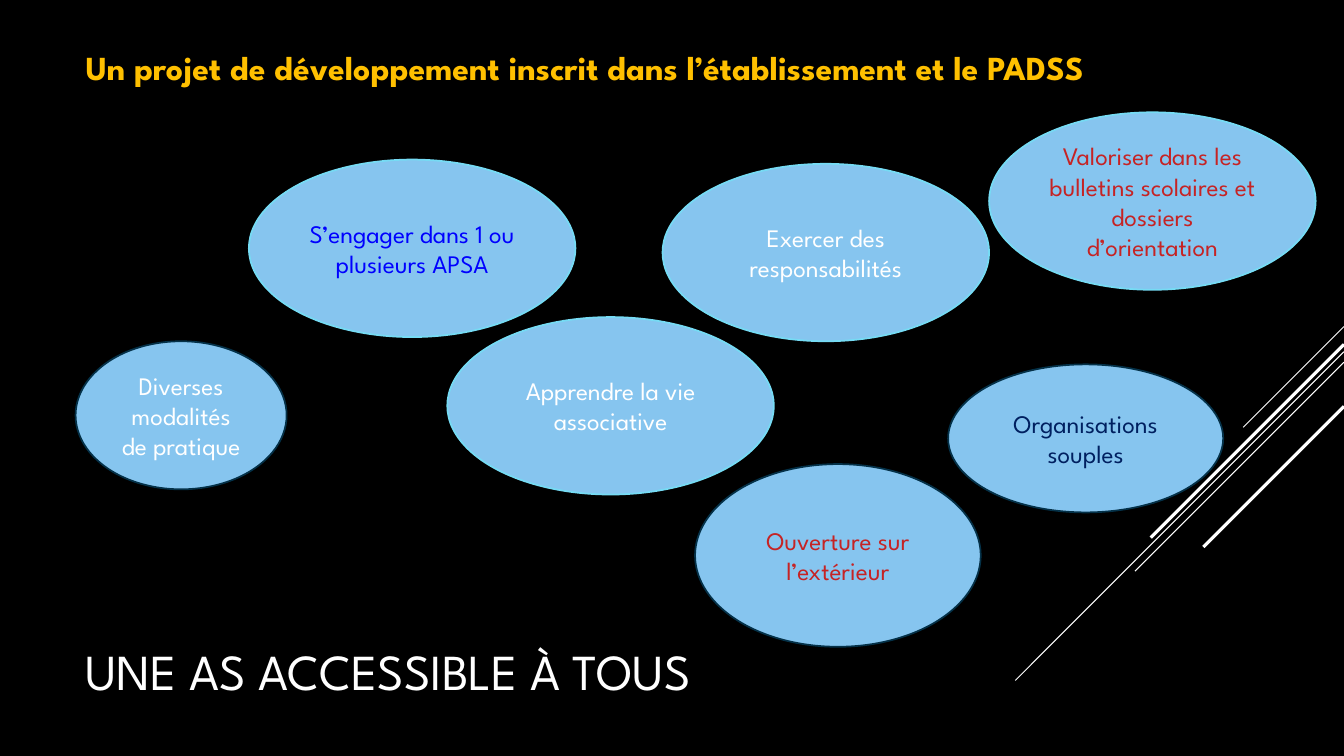
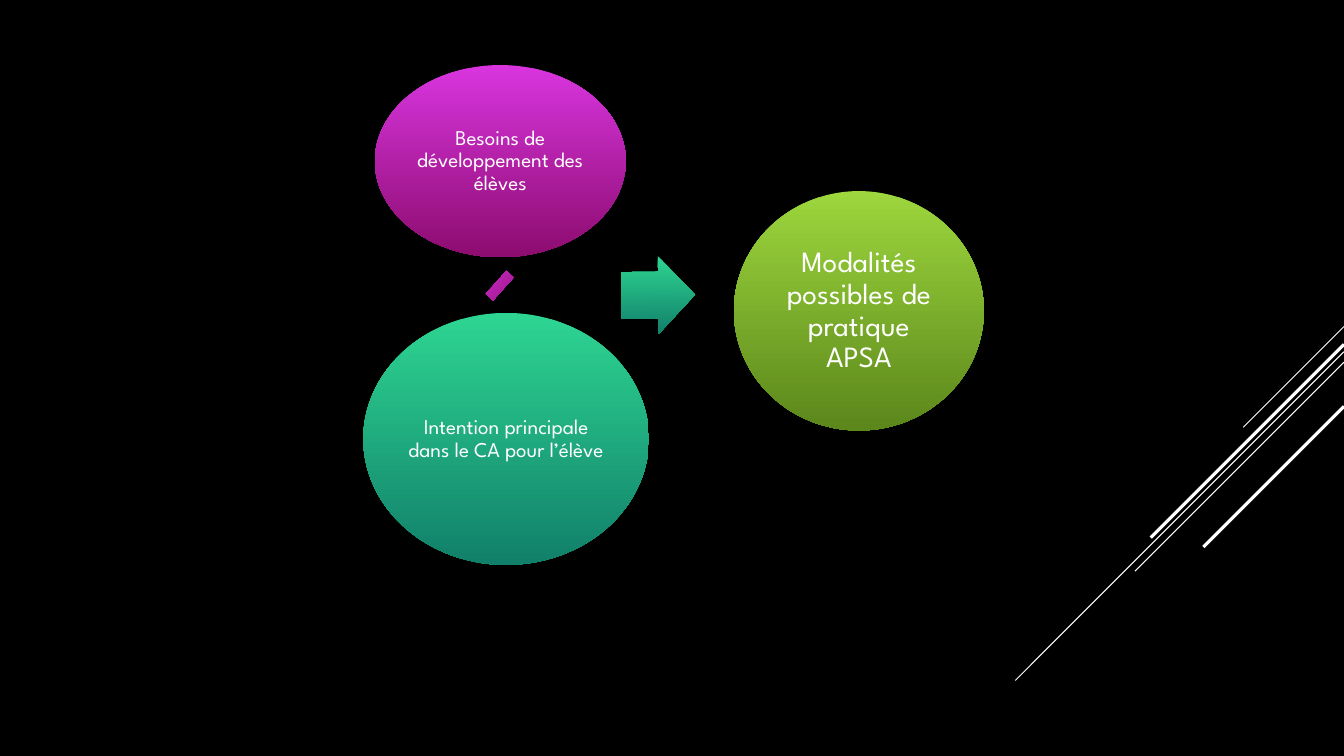
"""Builds two slides on an accessible school sports association."""
from dataclasses import dataclass
from typing import Any, NamedTuple

from lxml.etree import SubElement
from pptx import Presentation
from pptx.dml.color import RGBColor
from pptx.enum.shapes import MSO_CONNECTOR as Connector, MSO_SHAPE as Shape
from pptx.enum.text import MSO_ANCHOR as Anchor, MSO_AUTO_SIZE as AutoSize, PP_ALIGN as Align
from pptx.oxml.ns import qn
from pptx.util import Emu, Pt

PX = 9525
WIDTH, HEIGHT = 1280, 720


class Gradient(NamedTuple):
    top: str
    bottom: str


@dataclass(frozen=True)
class Theme:
    font: str = "League Spartan"
    background: str = "000000"
    white: str = "FFFFFF"
    gold: str = "FFC000"
    bubble: str = "86C5EF"
    light_edge: str = "76DBF4"
    dark_edge: str = "043148"
    blue: str = "0000FF"
    navy: str = "002060"
    red: str = "C62324"
    magenta: Gradient = Gradient("D835DF", "8D0C6F")
    green: Gradient = Gradient("2ED592", "11806A")
    lime: Gradient = Gradient("9DD63D", "5B871B")
    title_size: int = 36
    subtitle_size: int = 24
    bubble_size: int = 18
    step_size: int = 15
    outcome_size: int = 21
    edge_width: float = 1.25
    thin: float = 0.75
    thick: float = 2.25


THEME = Theme()


class Box(NamedTuple):
    left: int
    top: int
    width: int
    height: int


class Ray(NamedTuple):
    top: int
    run: int
    weight: float


class Bubble(NamedTuple):
    text: str
    box: Box
    color: str
    edge: str


class Step(NamedTuple):
    text: str
    box: Box
    gradient: Gradient
    size: int
    inset: int


class Sign(NamedTuple):
    kind: Shape
    box: Box
    gradient: Gradient
    rotation: float
    adjustments: tuple[float, ...] = ()


RAYS = [
    Ray(311, 96, THEME.thin),
    Ray(335, 313, THEME.thin),
    Ray(345, 199, THEME.thin),
    Ray(328, 184, THEME.thick),
    Ray(387, 134, THEME.thick),
]

BUBBLES = [
    Bubble("S’engager dans 1 ou plusieurs APSA", Box(237, 152, 311, 169), THEME.blue, THEME.light_edge),
    Bubble("Exercer des responsabilités", Box(631, 156, 311, 169), THEME.white, THEME.light_edge),
    Bubble("Apprendre la vie associative", Box(426, 302, 311, 169), THEME.white, THEME.light_edge),
    Bubble("Diverses modalités de pratique", Box(72, 325, 201, 141), THEME.white, THEME.dark_edge),
    Bubble("Organisations souples", Box(903, 347, 262, 141), THEME.navy, THEME.dark_edge),
    Bubble("Ouverture sur l’extérieur", Box(662, 442, 272, 174), THEME.red, THEME.dark_edge),
    Bubble("Valoriser dans les bulletins scolaires et dossiers d’orientation",
           Box(942, 107, 311, 169), THEME.red, THEME.light_edge),
]

STEPS = [
    Step("Besoins de développement des élèves", Box(357, 62, 239, 183), THEME.magenta, THEME.step_size, 2),
    Step("Intention principale dans le CA pour l’élève", Box(346, 298, 272, 240), THEME.green,
         THEME.step_size, 2),
    Step("Modalités possibles de pratique APSA", Box(699, 182, 238, 228), THEME.lime,
         THEME.outcome_size, 3),
]

SIGNS = [
    Sign(Shape.MATH_MINUS, Box(456, 252, 40, 40), THEME.magenta, 311.7),
    Sign(Shape.RIGHT_ARROW, Box(592, 244, 70, 74), THEME.green, 359.4, (0.6, 0.5)),
]


def px(*lengths: int) -> list[Emu]:
    """Turn pixel lengths into EMU."""
    return [Emu(length * PX) for length in lengths]


def rgb(color: str) -> RGBColor:
    """Read a hexadecimal colour."""
    return RGBColor.from_string(color)


def apply(target: Any, values: dict[str, Any]) -> None:
    """Set each named attribute on the target."""
    for name, value in values.items():
        setattr(target, name, value)


def write(shape: Any, text: str, size: int, color: str, frame_format: dict[str, Any],
          paragraph_format: dict[str, Any], bold: bool = False) -> None:
    """Put one formatted paragraph into a shape."""
    frame = shape.text_frame
    frame.text = text
    apply(frame, {"word_wrap": True, "vertical_anchor": Anchor.MIDDLE} | frame_format)
    paragraph = frame.paragraphs[0]
    apply(paragraph, paragraph_format)
    font = paragraph.runs[0].font
    apply(font, {"name": THEME.font, "size": Pt(size), "bold": bold})
    font.color.rgb = rgb(color)


def add_filled(slide: Any, kind: Shape, box: Box, fill: str | Gradient, edge: str | None = None) -> Any:
    """Draw a preset shape with a plain or vertical gradient fill."""
    shape = slide.shapes.add_shape(kind, *px(*box))
    shape.shadow.inherit = False
    if isinstance(fill, Gradient):
        shape.fill.gradient()
        shape.fill.gradient_angle = 270
        for stop, color in zip(shape.fill.gradient_stops, fill):
            stop.color.rgb = rgb(color)
    else:
        shape.fill.solid()
        shape.fill.fore_color.rgb = rgb(fill)
    if edge:
        shape.line.color.rgb = rgb(edge)
        shape.line.width = Pt(THEME.edge_width)
    else:
        shape.line.fill.background()
    return shape


def add_bubble(slide: Any, bubble: Bubble) -> None:
    """Draw one outlined bubble of the first slide."""
    shape = add_filled(slide, Shape.OVAL, bubble.box, THEME.bubble, bubble.edge)
    write(shape, bubble.text, THEME.bubble_size, bubble.color, {}, {"alignment": Align.CENTER})


def add_step(slide: Any, step: Step) -> None:
    """Draw one gradient circle of the equation."""
    shape = add_filled(slide, Shape.OVAL, step.box, step.gradient)
    sides = ("left", "top", "right", "bottom")
    margins = {f"margin_{side}": Emu(step.inset * PX) for side in sides}
    write(shape, step.text, step.size, THEME.white, margins,
          {"alignment": Align.CENTER, "line_spacing": 0.9})


def add_sign(slide: Any, sign: Sign) -> None:
    """Draw one operator of the equation."""
    shape = add_filled(slide, sign.kind, sign.box, sign.gradient)
    shape.rotation = sign.rotation
    for index, value in enumerate(sign.adjustments):
        shape.adjustments[index] = value


def add_rays(slide: Any) -> None:
    """Draw the diagonal lines that leave the right edge."""
    for ray in RAYS:
        line = slide.shapes.add_connector(
            Connector.STRAIGHT, *px(WIDTH, ray.top, WIDTH - ray.run, ray.top + ray.run))
        line.line.color.rgb = rgb(THEME.white)
        line.line.width = Pt(ray.weight)
        SubElement(line.element.spPr, qn("a:effectLst"))


def add_slide(deck: Any, layout: int) -> Any:
    """Add a slide with the shared decoration."""
    slide = deck.slides.add_slide(deck.slide_layouts[layout])
    add_rays(slide)
    return slide


def build_access(deck: Any) -> None:
    """Build the slide on access for all."""
    slide = add_slide(deck, 5)
    title = slide.shapes.title
    apply(title, dict(zip(("left", "top", "width", "height"), px(72, 559, 896, 158))))
    write(title, "UNE AS ACCESSIBLE À TOUS", THEME.title_size, THEME.white,
          {"auto_size": AutoSize.NONE}, {"alignment": Align.LEFT})
    subtitle = slide.shapes.add_textbox(*px(72, 40, 1089, 48))
    write(subtitle, "Un projet de développement inscrit dans l’établissement et le PADSS",
          THEME.subtitle_size, THEME.gold,
          {"word_wrap": False, "auto_size": AutoSize.SHAPE_TO_FIT_TEXT, "vertical_anchor": Anchor.TOP},
          {"alignment": Align.LEFT}, bold=True)
    for bubble in BUBBLES:
        add_bubble(slide, bubble)


def build_equation(deck: Any) -> None:
    """Build the slide that leads from needs to practice."""
    slide = add_slide(deck, 6)
    for step in STEPS:
        add_step(slide, step)
    for sign in SIGNS:
        add_sign(slide, sign)


def main() -> None:
    """Build and save the deck."""
    deck = Presentation()
    deck.slide_width, deck.slide_height = px(WIDTH, HEIGHT)
    backdrop = deck.slide_master.background.fill
    backdrop.solid()
    backdrop.fore_color.rgb = rgb(THEME.background)
    build_access(deck)
    build_equation(deck)
    deck.save("out.pptx")


if __name__ == "__main__":
    main()
